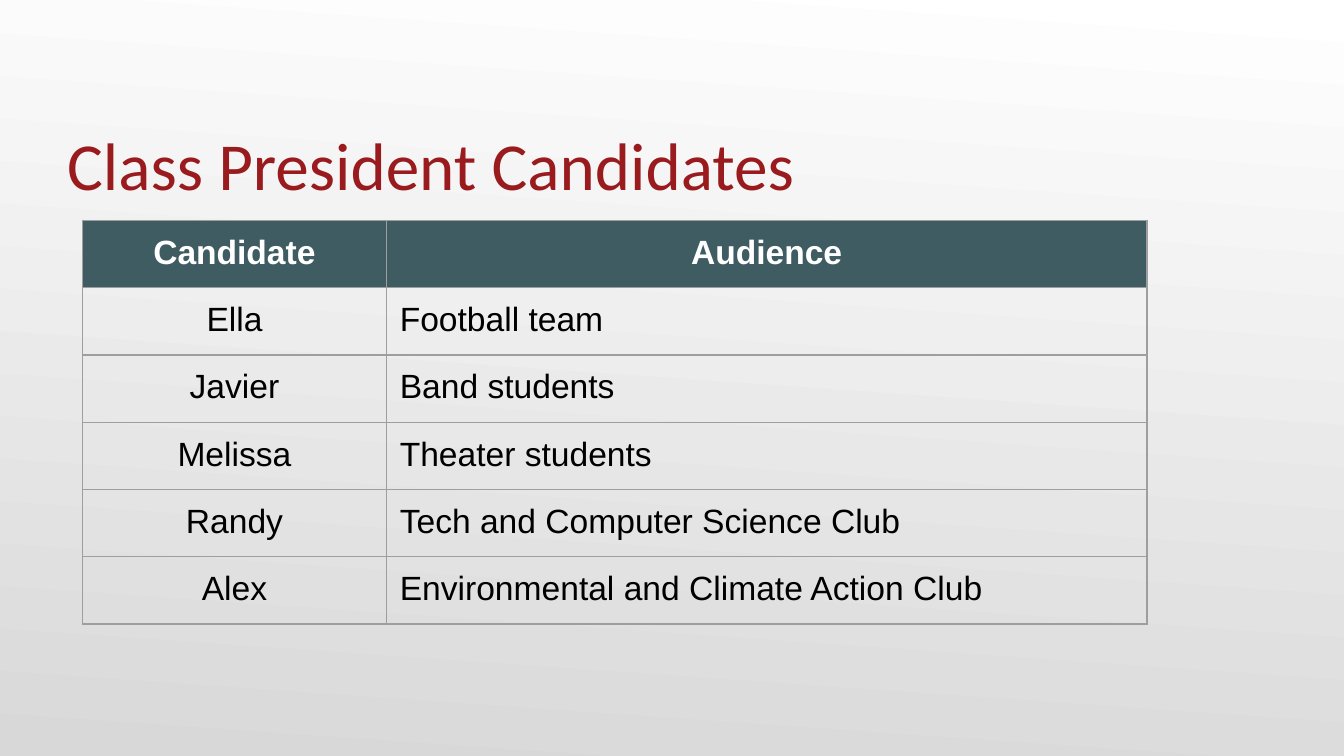
from typing import NamedTuple

from lxml import etree
from pptx import Presentation
from pptx.dml.color import RGBColor
from pptx.enum.text import MSO_ANCHOR, PP_ALIGN
from pptx.oxml.ns import qn
from pptx.util import Pt

LEFT, CENTER = PP_ALIGN.LEFT, PP_ALIGN.CENTER
TOP, BOTTOM = MSO_ANCHOR.TOP, MSO_ANCHOR.BOTTOM
EMU_PER_PX = 4572
BORDER_WIDTH = Pt(0.75)
COLORS = {
    "background_top": "FFFFFF",
    "background_bottom": "D8D8D8",
    "title": "991B1E",
    "header_fill": "3E5C61",
    "header_text": "FFFFFF",
    "body_text": "000000",
    "border": "9E9E9E",
}
COLUMN_WIDTHS = (452, 1132)
ROW_HEIGHT = 84
TABLE_HEIGHT = 600
CELL_INSET = 20


class Candidate(NamedTuple):
    """A table row: a candidate and the audience addressed."""

    name: str
    audience: str


HEADER = Candidate("Candidate", "Audience")
CANDIDATES = (
    Candidate("Ella", "Football team"),
    Candidate("Javier", "Band students"),
    Candidate("Melissa", "Theater students"),
    Candidate("Randy", "Tech and Computer Science Club"),
    Candidate("Alex", "Environmental and Climate Action Club"),
)


def px(length: int) -> int:
    """Turn pixels into EMU."""
    return length * EMU_PER_PX


def rgb(name: str) -> RGBColor:
    """Look up a named color."""
    return RGBColor.from_string(COLORS[name])


def write_text(frame, text: str, *, size: int, font: str, color: str,
               bold: bool = False, align=LEFT) -> None:
    """Write one formatted paragraph into a text frame."""
    para = frame.paragraphs[0]
    para.alignment = align
    span = para.add_run()
    span.text = text
    span.font.size = Pt(size)
    span.font.name = font
    span.font.bold = bold
    span.font.color.rgb = rgb(color)


def add_borders(cell) -> None:
    """Draw a thin line on all four sides of a cell."""
    properties = cell._tc.get_or_add_tcPr()
    for side in ("a:lnL", "a:lnR", "a:lnT", "a:lnB"):
        line = etree.SubElement(properties, qn(side), w=str(BORDER_WIDTH))
        fill = etree.SubElement(line, qn("a:solidFill"))
        etree.SubElement(fill, qn("a:srgbClr"), val=COLORS["border"])


def draw_background(page) -> None:
    """Fill the page with a nearly vertical gradient."""
    fill = page.background.fill
    fill.gradient()
    fill.gradient_angle = 266
    for stop, name in zip(fill.gradient_stops, ("background_top", "background_bottom")):
        stop.color.rgb = rgb(name)


def draw_title(page, text: str) -> None:
    """Place the slide title above the table."""
    box = page.shapes.add_textbox(px(100), px(116), px(1800), px(188))
    frame = box.text_frame
    frame.word_wrap = True
    frame.vertical_anchor = BOTTOM
    frame.margin_left = frame.margin_right = frame.margin_bottom = 0
    frame.margin_top = px(10)
    write_text(frame, text, size=36, font="Calibri", color="title")


def draw_cell(cell, text: str, *, header: bool, align) -> None:
    """Format and fill one table cell."""
    cell.margin_left = cell.margin_right = px(CELL_INSET)
    cell.margin_top = cell.margin_bottom = px(CELL_INSET)
    cell.vertical_anchor = TOP
    add_borders(cell)
    if header:
        cell.fill.solid()
        cell.fill.fore_color.rgb = rgb("header_fill")
    else:
        cell.fill.background()
    write_text(cell.text_frame, text, size=18, font="Arial", bold=header, align=align,
               color="header_text" if header else "body_text")


def draw_table(page, rows: tuple[Candidate, ...]) -> None:
    """Draw the header row and one row per candidate."""
    holder = page.shapes.add_table(
        len(rows), len(COLUMN_WIDTHS), px(123), px(328),
        px(sum(COLUMN_WIDTHS)), px(ROW_HEIGHT * len(rows)),
    )
    table = holder.table
    table.first_row = table.horz_banding = False
    for column, width in zip(table.columns, COLUMN_WIDTHS):
        column.width = px(width)
    for row_index, row in enumerate(rows):
        header = row_index == 0
        for column_index, text in enumerate(row):
            align = CENTER if header or column_index == 0 else LEFT
            draw_cell(table.cell(row_index, column_index), text, header=header, align=align)
    holder.height = px(TABLE_HEIGHT)


def main() -> None:
    """Build and save the deck."""
    deck = Presentation()
    deck.slide_width, deck.slide_height = px(2000), px(1125)
    page = deck.slides.add_slide(deck.slide_layouts[6])
    draw_background(page)
    draw_title(page, "Class President Candidates")
    draw_table(page, (HEADER, *CANDIDATES))
    deck.save("out.pptx")


if __name__ == "__main__":
    main()
